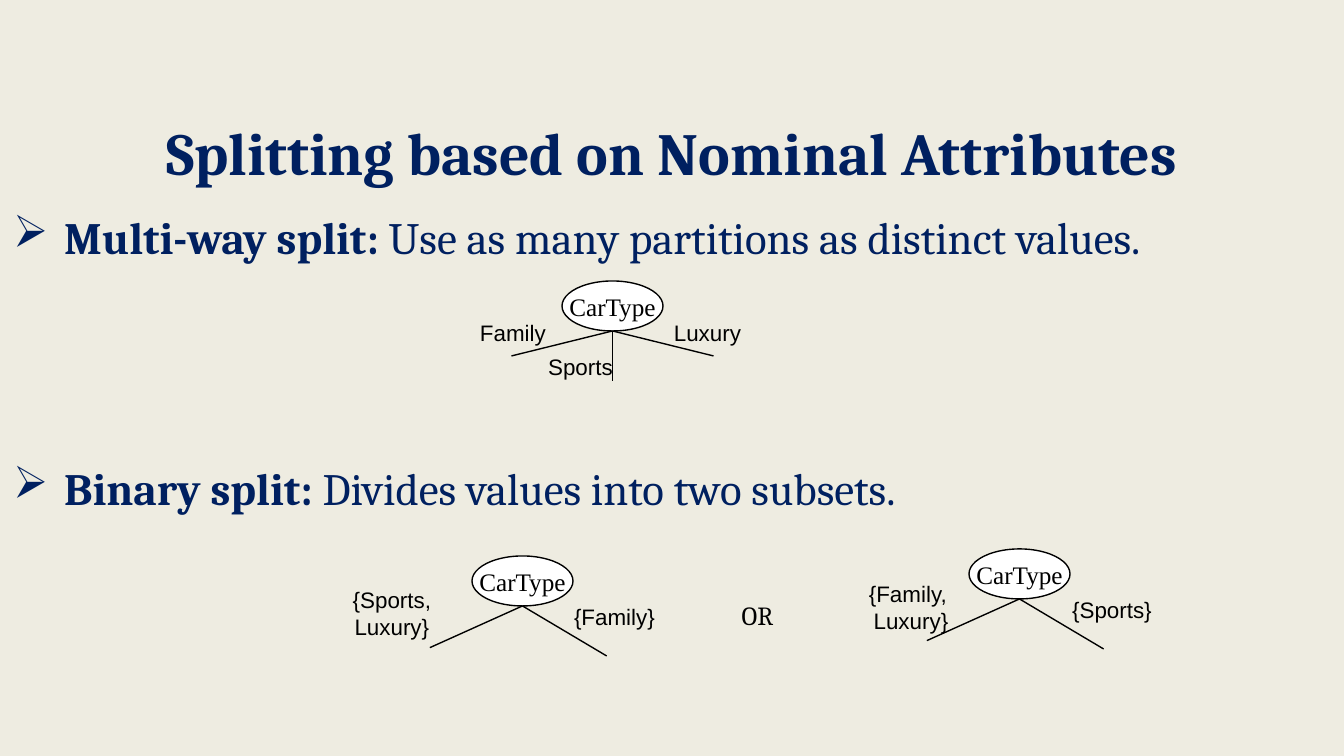
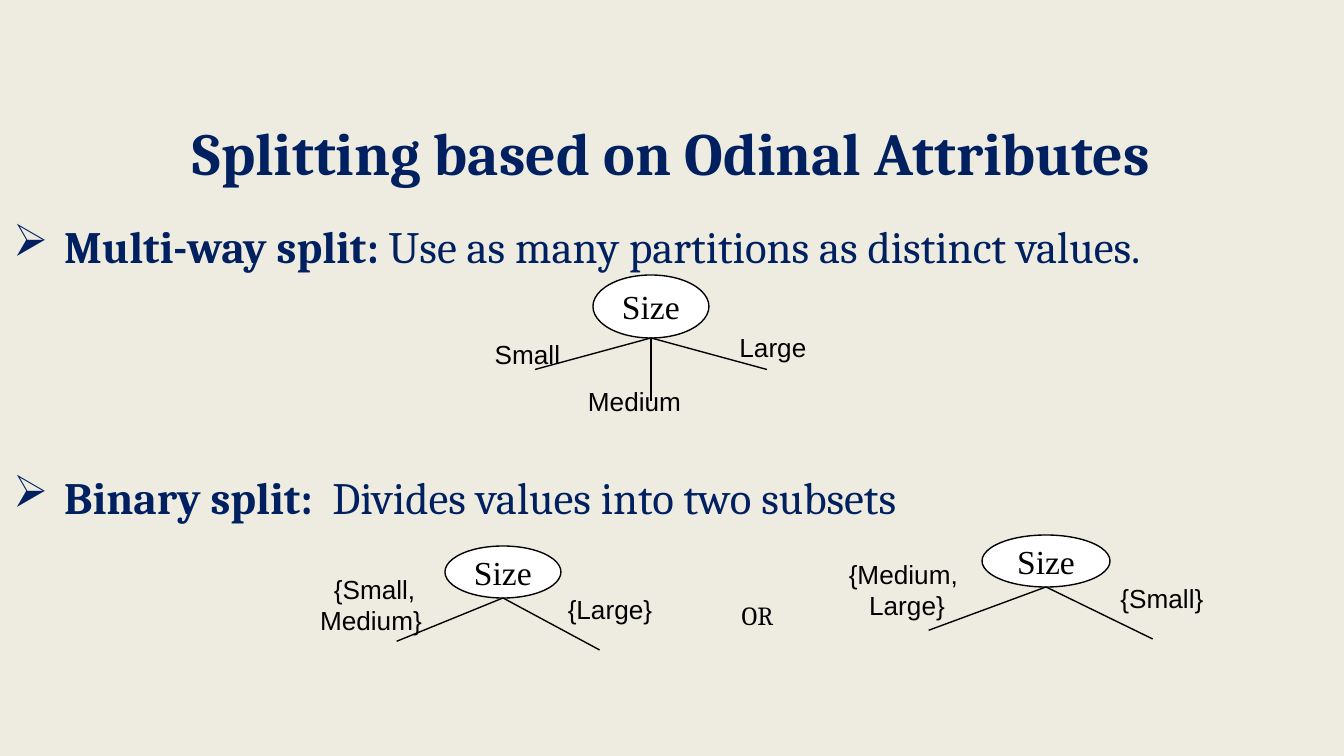
from lxml import etree
from pptx import Presentation
from pptx import util as u
from pptx.dml.color import RGBColor
from pptx.enum import shapes, text
from pptx.oxml.ns import qn

EMU_PER_PX = 914400 / 134.4
SLIDE_WIDTH, SLIDE_HEIGHT = 1344, 756
PAPER, NAVY, BLACK, WHITE = "EEECE1", "002060", "000000", "FFFFFF"
HEADING_FONT, NODE_FONT, LABEL_FONT = "Cambria", "Times New Roman", "Arial"
BULLET_INDENT = 51

# Branch ends, measured from the foot of the root in root widths and heights
MULTI_WAY = [(-1, 1 / 2), (0, 1), (1, 1 / 2)]
BINARY = [(-11 / 12, 5 / 6), (5 / 6, 1)]


def px(length):
    return u.Emu(round(length * EMU_PER_PX))


def color(hex_string):
    return RGBColor.from_string(hex_string)


def set_font(font, name, size, hex_string, bold=False):
    font.name, font.size, font.bold = name, u.Pt(size), bold
    font.color.rgb = color(hex_string)


def write_centered(frame, wording, name, size, hex_string=BLACK, bold=False,
                   wrap=False, anchor=text.MSO_ANCHOR.MIDDLE):
    frame.word_wrap = wrap
    frame.vertical_anchor = anchor
    paragraph = frame.paragraphs[0]
    paragraph.text = wording
    paragraph.alignment = text.PP_ALIGN.CENTER
    set_font(paragraph.font, name, size, hex_string, bold)


def add_words(parent, box, wording, name, size, **style):
    words = parent.shapes.add_textbox(*map(px, box))
    write_centered(words.text_frame, wording, name, size, **style)


def add_branch(parent, start, end):
    branch = parent.shapes.add_connector(
        shapes.MSO_CONNECTOR.STRAIGHT, *map(px, start + end))
    branch.line.color.rgb = color(BLACK)
    branch.line.width = u.Pt(0.75)
    etree.SubElement(branch._element.spPr, qn("a:effectLst"))


def add_tree(slide, root_box, attribute, root_size, branches, label_size, labels):
    """Labels are (wording, box), each box relative to the root's top left."""
    left, top, width, height = root_box
    tree = slide.shapes.add_group_shape()
    root = tree.shapes.add_shape(shapes.MSO_SHAPE.OVAL, *map(px, root_box))
    root.shadow.inherit = False
    root.fill.solid()
    root.fill.fore_color.rgb = color(WHITE)
    root.line.color.rgb = color(BLACK)
    root.line.width = u.Pt(0.75)
    write_centered(root.text_frame, attribute, NODE_FONT, root_size)

    foot_x, foot_y = left + width / 2, top + height
    for across, down in branches:
        add_branch(tree, (foot_x, foot_y),
                   (foot_x + across * width, foot_y + down * height))
    for wording, (x, y, *extent) in labels:
        add_words(tree, (left + x, top + y, *extent), wording, LABEL_FONT,
                  label_size, wrap=" " in wording and "\n" not in wording)


def add_bullets(slide, box, bullets):
    frame = slide.shapes.add_textbox(*map(px, box)).text_frame
    frame.word_wrap = True
    for index, (term, meaning) in enumerate(bullets):
        bullet = frame.paragraphs[0] if index == 0 else frame.add_paragraph()
        bullet.space_before = u.Pt(106 if index else 0)
        for wording, bold in ((term, True), (meaning, False)):
            run = bullet.add_run()
            run.text = wording
            set_font(run.font, HEADING_FONT, 24, NAVY, bold)
        properties = bullet._p.get_or_add_pPr()
        properties.set("marL", str(px(BULLET_INDENT)))
        properties.set("indent", str(-px(BULLET_INDENT)))
        etree.SubElement(properties, qn("a:buChar"), char="➢")


def add_splitting_slide(deck, title, bullets_box, bullets, attribute, root_size,
                        label_size, trees):
    slide = deck.slides.add_slide(deck.slide_layouts[6])
    slide.background.fill.solid()
    slide.background.fill.fore_color.rgb = color(PAPER)
    add_words(slide, (0, 109, SLIDE_WIDTH, 101), title, HEADING_FONT, 32,
              hex_string=NAVY, bold=True, wrap=True, anchor=text.MSO_ANCHOR.TOP)
    add_bullets(slide, bullets_box, bullets)
    for root_box, branches, labels in trees:
        add_tree(slide, root_box, attribute, root_size, branches, label_size, labels)
    add_words(slide, (727, 592, 61, 46), "OR", HEADING_FONT, 14)


def main():
    deck = Presentation()
    deck.slide_width, deck.slide_height = px(SLIDE_WIDTH), px(SLIDE_HEIGHT)
    multi_way = ("Multi-way split: ", "Use as many partitions as distinct values.")

    add_splitting_slide(
        deck, "Splitting based on Nominal Attributes", (0, 203, SLIDE_WIDTH, 411),
        [multi_way, ("Binary split: ", "Divides values into two subsets.")],
        "CarType", 13.5, 12,
        [((562, 281, 101, 50), MULTI_WAY,
          [("Family", (-96, 32, 94, 40)),
           ("Sports", (-28, 66, 93, 40)),
           ("Luxury", (98, 32, 95, 40))]),
         ((969, 549, 101, 50), BINARY,
          [("{Family, \nLuxury}", (-114, 24, 112, 69)),
           ("{Sports}", (89, 41, 108, 40))]),
         ((472, 556, 101, 50), BINARY,
          [("{Sports, Luxury}", (-137, 23, 114, 69)),
           ("{Family}", (88, 41, 109, 40))])])

    add_splitting_slide(
        deck, "Splitting based on Odinal Attributes", (0, 212, SLIDE_WIDTH, 423),
        [multi_way, ("Binary split:  ", "Divides values into two subsets")],
        "Size", 18, 14,
        [((593, 275, 116, 63), MULTI_WAY,
          [("Small", (-112, 56, 93, 46)),
           ("Medium", (-19, 103, 121, 46)),
           ("Large", (133, 49, 94, 46))]),
         ((445, 546, 116, 52), BINARY,
          [(" {Small, Medium}", (-145, 20, 142, 77)),
           ("{Large}", (109, 40, 112, 46))]),
         ((982, 535, 128, 52), BINARY,
          [("{Medium, \nLarge}", (-147, 16, 144, 77)),
           ("{Small}", (125, 40, 110, 46))])])

    deck.save("out.pptx")


if __name__ == "__main__":
    main()
